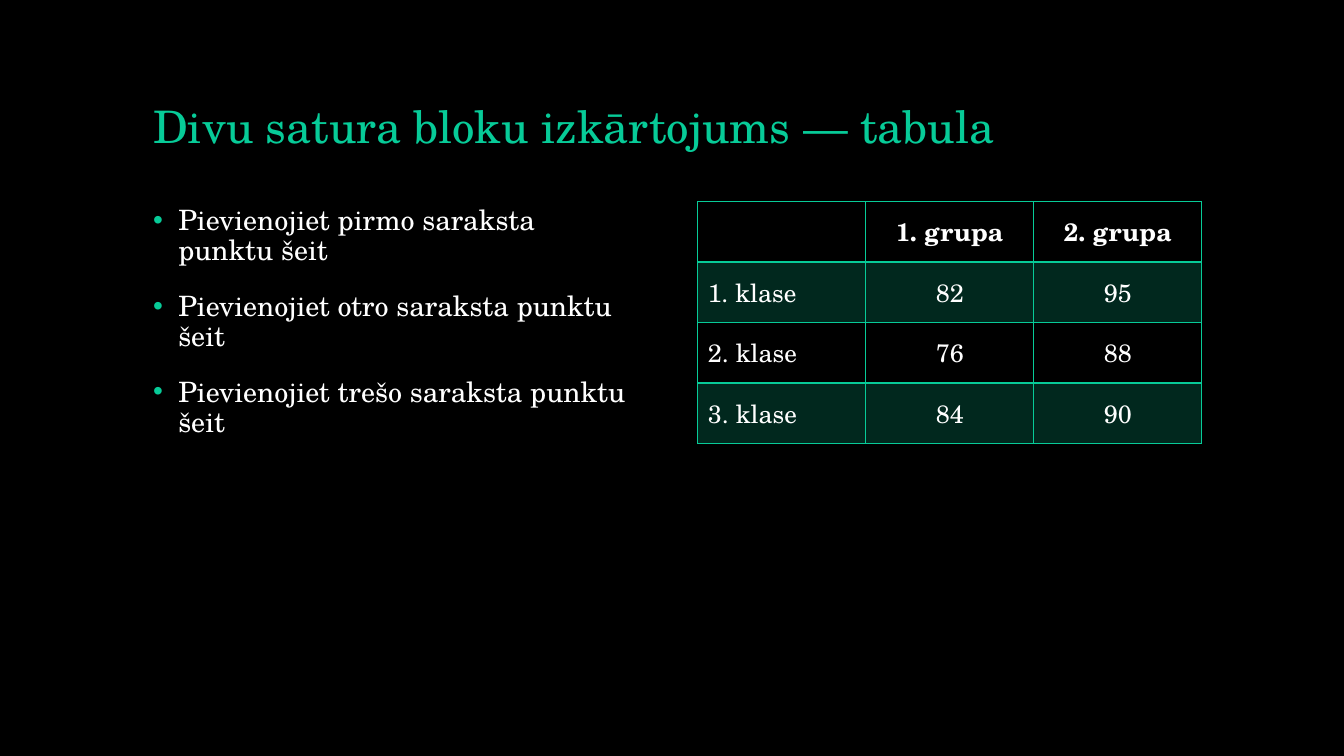
from dataclasses import dataclass

from lxml import etree
from pptx import Presentation
from pptx import util as u
from pptx.dml.color import RGBColor
from pptx.enum import text
from pptx.oxml import ns


@dataclass(frozen=True)
class Theme:
    font: str = "TeX Gyre Schola"
    background: str = "000000"
    accent: str = "07CB98"
    ink: str = "FFFFFF"
    title_size: int = 32
    body_size: int = 20
    table_size: int = 18
    band_opacity: int = 20


@dataclass(frozen=True)
class Area:
    left: float
    top: float
    width: float
    height: float

    def lengths(self) -> list:
        return [u.Inches(side) for side in (self.left, self.top, self.width, self.height)]


THEME = Theme()
TITLE_AREA = Area(1.42, 0.4, 10.5, 1.17)
LIST_AREA = Area(1.42, 2, 5, 4.76)
TABLE_AREA = Area(6.92, 2, 5, 2.4)
TITLE = "Divu satura bloku izkārtojums — tabula"
POINTS = [f"Pievienojiet {ordinal} saraksta punktu šeit" for ordinal in ("pirmo", "otro", "trešo")]
ROWS = [
    ("", "1. grupa", "2. grupa"),
    ("1. klase", "82", "95"),
    ("2. klase", "76", "88"),
    ("3. klase", "84", "90"),
]


def add_element(parent, tag: str, **attributes: str):
    return etree.SubElement(parent, ns.qn(tag), attributes)


def write_paragraph(paragraph, content: str, *, size: int, color: str = THEME.ink,
                    bold: bool = False, align=text.PP_ALIGN.LEFT) -> None:
    paragraph.alignment = align
    paragraph.font.size = u.Pt(size)
    if content:
        span = paragraph.add_run()
        span.text = content
        span.font.name = THEME.font
        span.font.size = u.Pt(size)
        span.font.bold = bold
        span.font.color.rgb = RGBColor.from_string(color)


def add_bullet(paragraph) -> None:
    properties = paragraph._p.get_or_add_pPr()
    properties.set("marL", str(u.Inches(0.25)))
    properties.set("indent", str(u.Inches(-0.25)))
    add_element(add_element(properties, "a:buClr"), "a:srgbClr", val=THEME.accent)
    add_element(properties, "a:buFont", typeface="Arial")
    add_element(properties, "a:buChar", char="•")


def add_text(page, area: Area, lines: list[str], *, size: int, color: str = THEME.ink,
             anchor=text.MSO_ANCHOR.TOP, bullets: bool = False) -> None:
    frame = page.shapes.add_textbox(*area.lengths()).text_frame
    frame.word_wrap = True
    frame.vertical_anchor = anchor
    for index, line in enumerate(lines):
        paragraph = frame.add_paragraph() if index else frame.paragraphs[0]
        if bullets:
            add_bullet(paragraph)
        paragraph.line_spacing = 0.9
        if index:
            paragraph.space_before = u.Pt(18)
        write_paragraph(paragraph, line, size=size, color=color)


def set_borders(cell, widths: dict[str, int]) -> None:
    properties = cell._tc.get_or_add_tcPr()
    for side, width in widths.items():
        line = add_element(properties, f"a:ln{side}", w=str(u.Pt(width)))
        add_element(add_element(line, "a:solidFill"), "a:srgbClr", val=THEME.accent)


def fill_band(cell) -> None:
    cell.fill.solid()
    cell.fill.fore_color.rgb = RGBColor.from_string(THEME.accent)
    color = cell._tc.tcPr.find(ns.qn("a:solidFill"))[0]
    add_element(color, "a:alpha", val=str(THEME.band_opacity * 1000))


def add_grades(page, area: Area, rows: list[tuple[str, ...]]) -> None:
    table = page.shapes.add_table(len(rows), len(rows[0]), *area.lengths()).table
    table.horz_banding = False
    for row, values in enumerate(rows):
        for column, value in enumerate(values):
            cell = table.cell(row, column)
            cell.vertical_anchor = text.MSO_ANCHOR.MIDDLE
            set_borders(cell, {"L": 1, "R": 1, "T": 2 if row == 1 else 1, "B": 2 if row == 0 else 1})
            if row % 2:
                fill_band(cell)
            else:
                cell.fill.background()
            align = text.PP_ALIGN.CENTER if column else text.PP_ALIGN.LEFT
            write_paragraph(cell.text_frame.paragraphs[0], value, size=THEME.table_size,
                            bold=row == 0, align=align)


def main() -> None:
    deck = Presentation()
    deck.slide_width, deck.slide_height = u.Inches(13.33), u.Inches(7.5)
    page = deck.slides.add_slide(deck.slide_layouts[6])
    page.background.fill.solid()
    page.background.fill.fore_color.rgb = RGBColor.from_string(THEME.background)
    add_text(page, TITLE_AREA, [TITLE], size=THEME.title_size, color=THEME.accent,
             anchor=text.MSO_ANCHOR.BOTTOM)
    add_text(page, LIST_AREA, POINTS, size=THEME.body_size, bullets=True)
    add_grades(page, TABLE_AREA, ROWS)
    deck.save("out.pptx")


if __name__ == "__main__":
    main()
